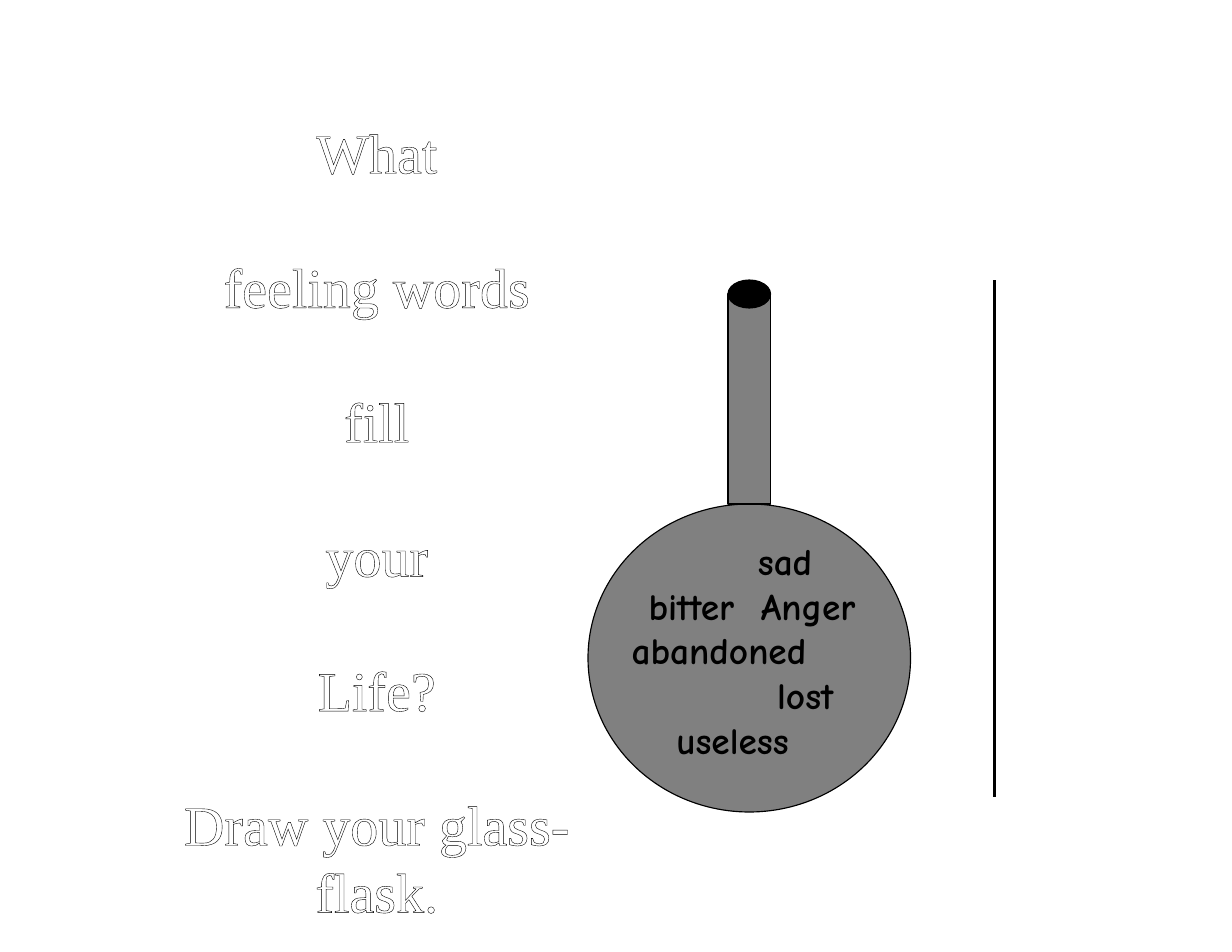
from lxml.etree import SubElement
from pptx import Presentation
from pptx.dml.color import RGBColor
from pptx.enum.shapes import MSO_CONNECTOR, MSO_SHAPE
from pptx.enum.text import PP_ALIGN
from pptx.oxml import parse_xml
from pptx.oxml.ns import nsdecls, qn
from pptx.util import Inches, Pt

BLACK = RGBColor(0x00, 0x00, 0x00)
WHITE = RGBColor(0xFF, 0xFF, 0xFF)
GRAY = RGBColor(0x80, 0x80, 0x80)

QUESTION = ["What", "feeling words", "fill", "your", "Life?",
            "Draw your glass-flask."]
# Each feeling word with its left indent in inches
FEELINGS = [("sad", 1.18), ("bitter  Anger", 0.59), ("abandoned", 0),
            ("lost", 1.54), ("useless", 0.24)]


def add_part(shapes, kind, left, top, width, height, color):
    shape = shapes.add_shape(kind, Inches(left), Inches(top),
                             Inches(width), Inches(height))
    shape.shadow.inherit = False
    shape.fill.solid()
    shape.fill.fore_color.rgb = color
    shape.line.color.rgb = BLACK
    shape.line.width = Pt(0.75)


def add_text_frame(shapes, left, top, width, height):
    box = shapes.add_textbox(Inches(left), Inches(top),
                             Inches(width), Inches(height))
    return box.text_frame


def add_outlined_line(frame, index, text, font_name, size, color, spacing):
    paragraph = frame.add_paragraph() if index else frame.paragraphs[0]
    paragraph.alignment = PP_ALIGN.CENTER
    paragraph.line_spacing = Pt(spacing)
    run = paragraph.add_run()
    run.text = text
    run.font.name = font_name
    run.font.size = Pt(size)
    run.font.color.rgb = color
    # Black letter outline
    outline = parse_xml(
        f'<a:ln {nsdecls("a")} w="9525"><a:solidFill>'
        f'<a:srgbClr val="{BLACK}"/></a:solidFill></a:ln>')
    run.font._element.insert(0, outline)
    return paragraph, run


def add_flask(shapes, left, top, width, height):
    neck_width, mouth_height, bulb_height = 0.38, 0.25, 2.75
    neck_left = left + (width - neck_width) / 2
    neck_top = top + mouth_height / 2
    bulb_top = top + height - bulb_height
    add_part(shapes, MSO_SHAPE.OVAL, left, bulb_top, width, bulb_height, GRAY)
    add_part(shapes, MSO_SHAPE.RECTANGLE, neck_left, neck_top,
             neck_width, bulb_top - neck_top, GRAY)
    add_part(shapes, MSO_SHAPE.OVAL, neck_left, top,
             neck_width, mouth_height, BLACK)


def add_divider(shapes, left, top, height):
    line = shapes.add_connector(MSO_CONNECTOR.STRAIGHT, Inches(left),
                                Inches(top), Inches(left), Inches(top + height))
    line.line.color.rgb = BLACK
    line.line.width = Pt(2.25)
    SubElement(line._element.spPr, qn("a:effectLst"))


def add_question(shapes, left, top, width, height):
    frame = add_text_frame(shapes, left, top, width, height)
    frame.word_wrap = False
    for index, text in enumerate(QUESTION):
        paragraph, _ = add_outlined_line(frame, index, text, "Times New Roman",
                                         36, WHITE, 43.2)
        if index < len(QUESTION) - 1:
            paragraph.space_after = Pt(43.2)


def add_feelings(shapes, left, top, width, height):
    frame = add_text_frame(shapes, left, top, width, height)
    frame.word_wrap = True
    frame.margin_left = frame.margin_right = 0
    for index, (text, indent) in enumerate(FEELINGS):
        paragraph, run = add_outlined_line(frame, index, text, "Comic Neue",
                                           24, BLACK, 28.9)
        run.font.bold = True
        properties = paragraph._p.get_or_add_pPr()
        properties.set("marL", str(Inches(indent)))
        properties.set("indent", "0")


def main():
    presentation = Presentation()
    presentation.slide_width = Inches(11)
    presentation.slide_height = Inches(8.5)
    slide = presentation.slides.add_slide(presentation.slide_layouts[6])

    # Flask, divider and question belong together
    group = slide.shapes.add_group_shape()
    add_flask(group.shapes, 5.25, 2.5, 2.88, 4.75)
    add_divider(group.shapes, 8.88, 2.5, 4.62)
    add_question(group.shapes, 1.13, 1, 4.47, 6.87)

    # Words inside the flask
    add_feelings(slide.shapes, 5.17, 4.75, 2.5, 2.25)
    presentation.save("out.pptx")


if __name__ == "__main__":
    main()
